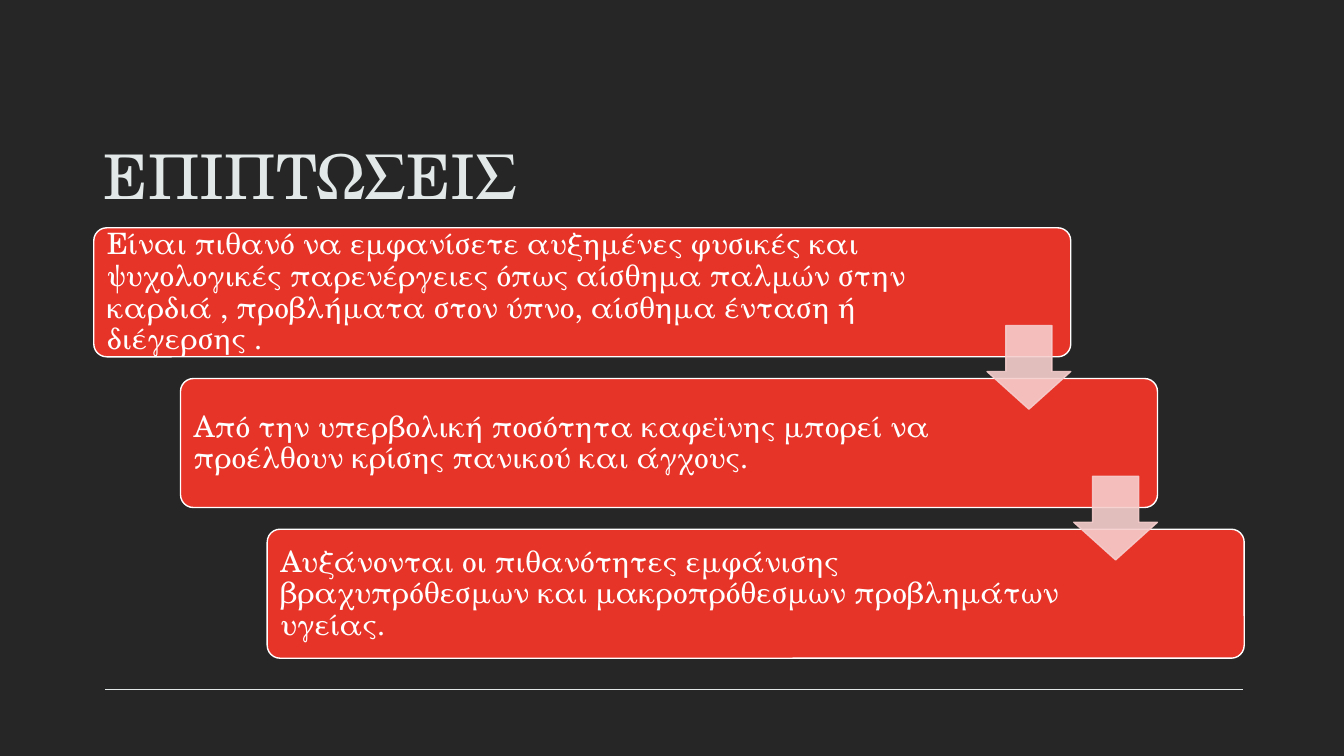
from lxml.etree import SubElement
from pptx import Presentation
from pptx.dml.color import RGBColor
from pptx.enum.shapes import MSO_CONNECTOR, MSO_SHAPE
from pptx.enum.text import MSO_ANCHOR, MSO_AUTO_SIZE, PP_ALIGN
from pptx.oxml.ns import qn
from pptx.util import Inches, Pt

FONT = "TeX Gyre Schola"
BACKGROUND, PALE, RED, PINK, WHITE = "262626", "E2E8E8", "E73429", "F6CECD", "FFFFFF"
LEFT, TOP, STEP_X, STEP_Y = 0.93, 2.26, 0.86, 1.495
BOX_W, BOX_H, ARROW = 9.69, 1.28, 0.83
EFFECTS = [
    ("Είναι πιθανό να εμφανίσετε αυξημένες φυσικές και ψυχολογικές παρενέργειες "
     "όπως αίσθημα παλμών στην καρδιά , προβλήματα στον ύπνο, αίσθημα ένταση ή "
     "διέγερσης .", 8.31),
    ("Από την υπερβολική ποσότητα καφεϊνης μπορεί να προέλθουν κρίσης πανικού "
     "και άγχους.", 7.93),
    ("Αυξάνονται οι πιθανότητες εμφάνισης βραχυπρόθεσμων και μακροπρόθεσμων "
     "προβλημάτων υγείας.", 7.93),
]


def rgb(value):
    """Turn a hex string into a colour."""
    return RGBColor.from_string(value)


def write(sp, text, size, color, anchor, inset_x=0.1, inset_y=0.05, spacing=None):
    """Put one formatted paragraph into a shape."""
    tf = sp.text_frame
    tf.word_wrap = True
    tf.auto_size = MSO_AUTO_SIZE.NONE
    tf.vertical_anchor = anchor
    tf.margin_left = tf.margin_right = Inches(inset_x)
    tf.margin_top = tf.margin_bottom = Inches(inset_y)
    p = tf.paragraphs[0]
    p.alignment = PP_ALIGN.LEFT
    p.line_spacing = spacing
    r = p.add_run()
    r.text = text
    r.font.name, r.font.size = FONT, Pt(size)
    r.font.color.rgb = rgb(color)


def add_preset(s, kind, box, adjustments, fill, line, alpha=None):
    """Add a filled and outlined preset shape, see-through if alpha is given."""
    sp = s.shapes.add_shape(kind, *map(Inches, box))
    sp.shadow.inherit = False
    for i, value in enumerate(adjustments):
        sp.adjustments[i] = value
    sp.fill.solid()
    sp.fill.fore_color.rgb = rgb(fill)
    sp.line.color.rgb = rgb(line)
    sp.line.width = Pt(1)
    if alpha:
        for clr in sp.element.spPr.iter(qn("a:srgbClr")):
            SubElement(clr, qn("a:alpha")).set("val", str(alpha * 1000))


def add_rule(s, x1, x2, y):
    """Add the thin horizontal line at the foot of the slide."""
    rule = s.shapes.add_connector(
        MSO_CONNECTOR.STRAIGHT, Inches(x1), Inches(y), Inches(x2), Inches(y))
    rule.line.color.rgb = rgb(PALE)
    rule.line.width = Pt(0.85)
    SubElement(rule.element.spPr, qn("a:effectLst"))


def add_title(s, text):
    """Place and fill the title placeholder."""
    title = s.shapes.title
    title.left, title.top = Inches(LEFT), Inches(0.96)
    title.width, title.height = Inches(11.4), Inches(1.19)
    write(title, text, 44, PALE, MSO_ANCHOR.BOTTOM)


def add_effect(s, index, text, width):
    """Add one step of the staircase with its text."""
    x, y = LEFT + index * STEP_X, TOP + index * STEP_Y
    add_preset(s, MSO_SHAPE.ROUNDED_RECTANGLE, (x, y, BOX_W, BOX_H), [0.1], RED, WHITE)
    box = (x + 0.04, y + 0.04, width, 1.21)
    write(s.shapes.add_textbox(*map(Inches, box)), text, 21, WHITE,
          MSO_ANCHOR.MIDDLE, 0.09, 0.09, 0.9)


def add_arrow(s, index):
    """Add the arrow that leads from one step to the next."""
    x = LEFT + BOX_W - ARROW + index * STEP_X
    y = 3.23 + index * STEP_Y
    add_preset(s, MSO_SHAPE.DOWN_ARROW, (x, y, ARROW, ARROW), [0.55, 0.45],
               PINK, PINK, alpha=90)


def main():
    """Build and save the slide."""
    prs = Presentation()
    prs.slide_width, prs.slide_height = Inches(13.33), Inches(7.5)
    s = prs.slides.add_slide(prs.slide_layouts[5])
    s.background.fill.solid()
    s.background.fill.fore_color.rgb = rgb(BACKGROUND)
    add_rule(s, 1.04, 12.33, 6.84)
    add_title(s, "ΕΠΙΠΤΩΣΕΙΣ")
    for i, (text, width) in enumerate(EFFECTS):
        add_effect(s, i, text, width)
    for i in range(len(EFFECTS) - 1):
        add_arrow(s, i)
    prs.save("out.pptx")


if __name__ == "__main__":
    main()
